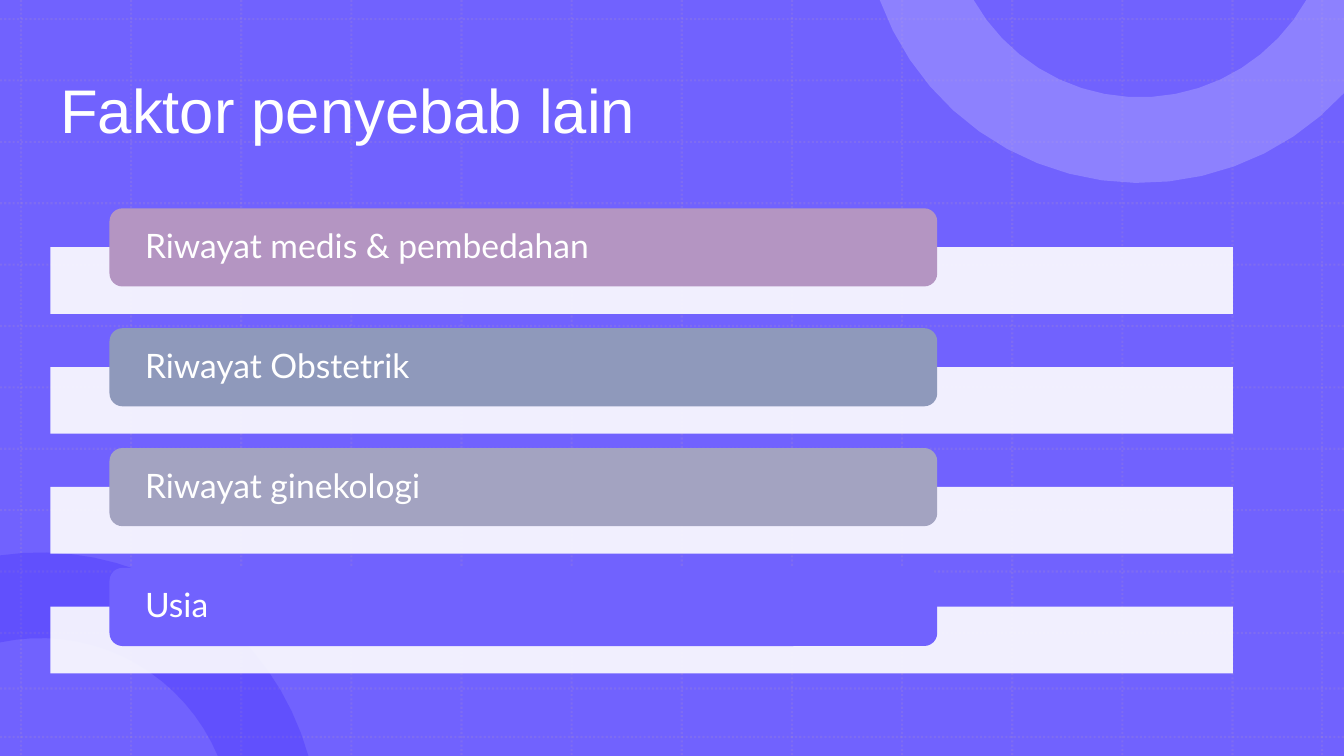
import math
from dataclasses import dataclass

import lxml.etree
import pptx
import pptx.dml.color
import pptx.enum.dml
import pptx.enum.shapes
import pptx.enum.text
import pptx.oxml.ns
import pptx.util

Cm = pptx.util.Cm
Pt = pptx.util.Pt
KIND = pptx.enum.shapes.MSO_SHAPE
WIDE, HIGH = 33.87, 19.05
WHITE, VIOLET, MAUVE = "FFFFFF", "7162FE", "B495C2"


@dataclass
class Arc:
    radius: float
    start: float
    end: float


@dataclass
class Ring:
    x: float
    y: float
    arcs: list[Arc]
    corner: list[tuple[float, float]]
    color: str
    alpha: int


@dataclass
class Factor:
    text: str
    color: str


# Arc angles are in degrees, clockwise from the right
RINGS = [
    Ring(1.02, 20.93, [Arc(7.01, -98.4, -15.6), Arc(4.85, -22.8, -102.1)],
         [], "220BFD", 20),
    Ring(28.73, -2.36, [Arc(6.97, 42.5, 160.2), Arc(4.81, 150.6, 29.4)],
         [(WIDE, 0)], "AAA1FE", 50),
]
FACTORS = [
    Factor("Riwayat medis & pembedahan", MAUVE),
    Factor("Riwayat Obstetrik", "8F99BB"),
    Factor("Riwayat ginekologi", "A3A3C1"),
    Factor("Usia", VIOLET),
]


def paint(fill, color: str, alpha: int = 100) -> None:
    fill.solid()
    fill.fore_color.rgb = pptx.dml.color.RGBColor.from_string(color)
    if alpha < 100:
        for tone in fill._xPr.iter(pptx.oxml.ns.qn("a:srgbClr")):
            node = lxml.etree.SubElement(tone, pptx.oxml.ns.qn("a:alpha"))
            node.set("val", str(alpha * 1000))


def style(shape, color: str, alpha: int = 100) -> None:
    paint(shape.fill, color, alpha)
    shape.line.fill.background()
    shape.shadow.inherit = False


def block(slide, kind, x: float, y: float, w: float, h: float,
          color: str, alpha: int = 100):
    shape = slide.shapes.add_shape(kind, Cm(x), Cm(y), Cm(w), Cm(h))
    style(shape, color, alpha)
    return shape


def write(frame, text: str, font: str, size: int) -> None:
    frame.text = text
    frame.word_wrap = True
    frame.vertical_anchor = pptx.enum.text.MSO_ANCHOR.MIDDLE
    para = frame.paragraphs[0]
    para.alignment = pptx.enum.text.PP_ALIGN.LEFT
    para.line_spacing = 0.9
    for run in para.runs:
        run.font.name = font
        run.font.size = Pt(size)
        paint(run.font.fill, WHITE)


def rule(slide, x1: float, y1: float, x2: float, y2: float) -> None:
    line = slide.shapes.add_connector(
        pptx.enum.shapes.MSO_CONNECTOR.STRAIGHT, Cm(x1), Cm(y1), Cm(x2), Cm(y2))
    line.line.width = Pt(1.5)
    paint(line.line.fill, MAUVE, 20)
    line.line.dash_style = pptx.enum.dml.MSO_LINE.ROUND_DOT
    lxml.etree.SubElement(line._element.spPr, pptx.oxml.ns.qn("a:effectLst"))


def spread(first: float, last: float, count: int) -> list[float]:
    return [first + i * (last - first) / (count - 1) for i in range(count)]


def band(slide, ring: Ring) -> None:
    points = []
    for arc in ring.arcs:
        for angle in spread(arc.start, arc.end, 18):
            turn = math.radians(angle)
            points.append((ring.x + arc.radius * math.cos(turn),
                           ring.y + arc.radius * math.sin(turn)))
    spots = [(Cm(x), Cm(y)) for x, y in points + ring.corner]
    pen = slide.shapes.build_freeform(*spots[0])
    pen.add_line_segments(spots[1:], close=True)
    style(pen.convert_to_shape(), ring.color, ring.alpha)


def main() -> None:
    deck = pptx.Presentation()
    deck.slide_width, deck.slide_height = Cm(WIDE), Cm(HIGH)
    slide = deck.slides.add_slide(deck.slide_layouts[6])

    # Backdrop with dotted grid and rings
    block(slide, KIND.RECTANGLE, 0, 0, WIDE, HIGH, VIOLET)
    for x in spread(0.53, 31.06, 12) + [33.32]:
        rule(slide, x, 0, x, HIGH)
    for y in spread(0.48, 15.95, 11) + [17.35, 18.57]:
        rule(slide, 0, y, WIDE, y)
    for ring in RINGS:
        band(slide, ring)

    # Title
    title = slide.shapes.add_textbox(Cm(1.27), Cm(1.02), Cm(29.8), Cm(3.68))
    write(title.text_frame, "Faktor penyebab lain", "Arial", 44)

    # Factors, each a label over a pale bar
    for i, factor in enumerate(FACTORS):
        top = 5.25 + i * 3.02
        block(slide, KIND.RECTANGLE, 1.27, top + 0.98, 29.8, 1.68, WHITE, 90)
        label = block(slide, KIND.ROUNDED_RECTANGLE, 2.76, top, 20.86, 1.97,
                      factor.color)
        frame = label.text_frame
        frame.margin_left = frame.margin_right = Cm(0.8)
        frame.margin_top = frame.margin_bottom = 0
        write(frame, factor.text, "Lato", 24)

    deck.save("out.pptx")


if __name__ == "__main__":
    main()
